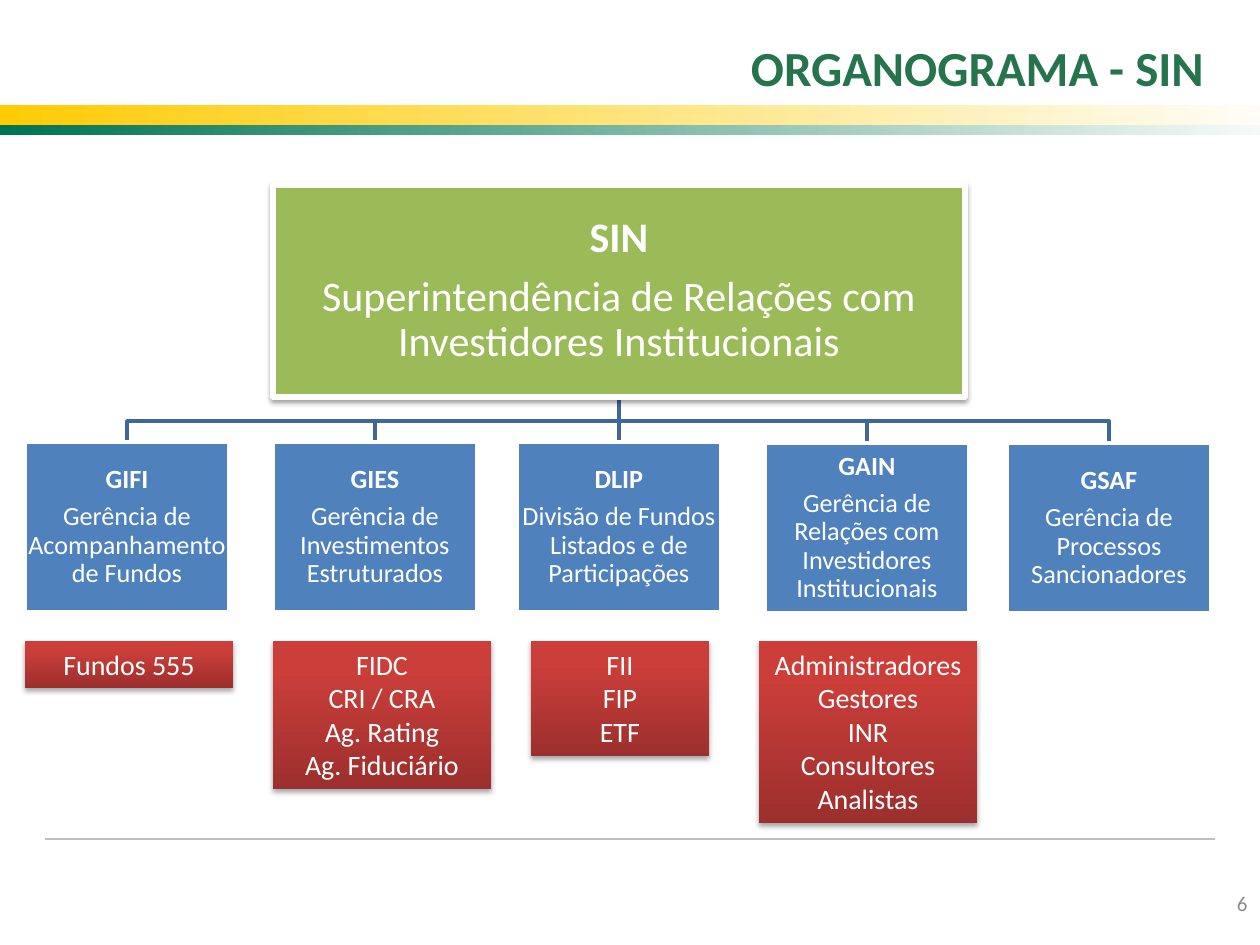
import pptx
import pptx.util
import pptx.dml.color
import pptx.enum.shapes
import pptx.enum.text
import pptx.oxml
import pptx.oxml.ns

PX = 914400 / 126  # EMU per px
THEME = {
    "font": "Calibri", "white": "FFFFFF", "title": "26744D", "number": "8C8C8C",
    "rule": "BFBFBF", "link": "3F6797", "root": "9BBB59", "unit": "4F81BD",
    "yellow": ("FFCB05", "FFFDF5"), "green": ("007450", "F5FAF8"),
    "red": ("9C2F2D", "CB3E3A"),
    "title_pt": 28, "root_pt": 24, "unit_pt": 15, "scope_pt": 16, "number_pt": 12,
}
RGB = pptx.dml.color.RGBColor.from_string
ALIGN = pptx.enum.text.PP_ALIGN
ANCHOR = pptx.enum.text.MSO_ANCHOR
RECT = pptx.enum.shapes.MSO_SHAPE.RECTANGLE
STRAIGHT = pptx.enum.shapes.MSO_CONNECTOR.STRAIGHT
NS = pptx.oxml.ns.nsdecls("a")
SHADOW = (f'<a:effectLst {NS}><a:outerShdw blurRad="39370" dist="%d" dir="5400000" '
          'rotWithShape="0"><a:srgbClr val="000000"><a:alpha val="%d"/></a:srgbClr>'
          '</a:outerShdw></a:effectLst>')

prs = pptx.Presentation()
prs.slide_width, prs.slide_height = round(1260 * PX), round(945 * PX)
s = prs.slides.add_slide(prs.slide_layouts[6])


def box(at, fill=None, border=0, shadow=None, angle=0, end=1):
    """Rectangle with a solid fill, or a gradient when fill is a pair."""
    sp = s.shapes.add_shape(RECT, *[round(v * PX) for v in at])
    sp.shadow.inherit = False
    if isinstance(fill, tuple):
        sp.fill.gradient()
        sp.fill.gradient_angle = angle
        for stop, color, position in zip(sp.fill.gradient_stops, fill, (0, end)):
            stop.color.rgb = RGB(color)
            stop.position = position
    else:
        sp.fill.solid()
        sp.fill.fore_color.rgb = RGB(fill)
    if border:
        sp.line.color.rgb = RGB(THEME["white"])
        sp.line.width = pptx.util.Pt(border)
    else:
        sp.line.fill.background()
    if shadow:
        pr = sp._element.spPr
        pr.remove(pr.find(pptx.oxml.ns.qn("a:effectLst")))
        pr.append(pptx.oxml.parse_xml(SHADOW % shadow))
    return sp


def write(sp, lines, size, color, align=ALIGN.CENTER, anchor=ANCHOR.MIDDLE,
          bold_first=False, inset=None, para=None):
    tf = sp.text_frame
    tf.word_wrap, tf.vertical_anchor = True, anchor
    if inset is not None:
        for side in ("left", "top", "right", "bottom"):
            setattr(tf, f"margin_{side}", round(inset * PX))
    for i, line in enumerate(lines):
        p = tf.paragraphs[0] if i == 0 else tf.add_paragraph()
        p.alignment = align
        for name, value in (para or {}).items():
            setattr(p, name, value)
        r = p.add_run()
        r.text = line
        r.font.color.rgb = RGB(color)
        look = {"name": THEME["font"], "size": pptx.util.Pt(size),
                "bold": bold_first and i == 0}
        for name, value in look.items():
            setattr(r.font, name, value)


# Footer rule and header bands
rule = s.shapes.add_connector(STRAIGHT, *[round(v * PX) for v in (45, 839, 1215, 839)])
rule.line.color.rgb = RGB(THEME["rule"])
rule.line.width = pptx.util.Pt(0.75)
box((0, 105, 1260, 20), THEME["yellow"])
box((0, 125, 1260, 10), THEME["green"])

# Slide number and title
for at, text, size, color, anchor, bold in (
        ((1187, 872, 73, 63), "6", "number_pt", "number", ANCHOR.MIDDLE, False),
        ((25, 19, 1191, 84), "ORGANOGRAMA - SIN", "title_pt", "title", ANCHOR.BOTTOM, True)):
    sp = s.shapes.add_textbox(*[round(v * PX) for v in at])
    write(sp, [text], THEME[size], THEME[color], ALIGN.RIGHT, anchor, bold)

# Organisation data: left, top, acronym, name
ROOT = (273, 185, 692, 212)
UNIT_W, UNIT_H, BUS_Y = 204, 170, 421
units = [
    (25, 442, "GIFI", "Gerência de Acompanhamento de Fundos"),
    (273, 442, "GIES", "Gerência de Investimentos Estruturados"),
    (517, 442, "DLIP", "Divisão de Fundos Listados e de Participações"),
    (765, 443, "GAIN", "Gerência de Relações com Investidores Institucionais"),
    (1007, 443, "GSAF", "Gerência de Processos Sancionadores"),
]

# Links from the root to each unit, behind the boxes
root_x, root_y = ROOT[0] + ROOT[2] // 2, ROOT[1] + ROOT[3]
for left, top, *_ in reversed(units):
    x = left + UNIT_W // 2
    if x == root_x:
        link = trunk = s.shapes.add_connector(
            STRAIGHT, *[round(v * PX) for v in (x, root_y, x, top)])
    else:
        path = s.shapes.build_freeform(root_x, root_y, scale=PX)
        path.add_line_segments([(root_x, BUS_Y), (x, BUS_Y), (x, top)], close=False)
        link = path.convert_to_shape()
        link.shadow.inherit = False
        link.fill.background()
    link.line.color.rgb = RGB(THEME["link"])
    link.line.width = pptx.util.Pt(2)

for line in (rule, trunk):
    line._element.spPr.append(pptx.oxml.parse_xml(f"<a:effectLst {NS}/>"))

# Root box
root = box(ROOT, THEME["root"], 3, (20320, 38000))
write(root, ["SIN", "Superintendência de Relações com Investidores Institucionais"],
      THEME["root_pt"], THEME["white"], bold_first=True, inset=2,
      para={"line_spacing": 0.9, "space_after": pptx.util.Pt(8)})
trunk.begin_connect(root, 2)

# Unit boxes
for left, top, acronym, name in units:
    sp = box((left, top, UNIT_W, UNIT_H), THEME["unit"], 2)
    write(sp, [acronym, name], THEME["unit_pt"], THEME["white"], bold_first=True, inset=1,
          para={"line_spacing": 0.9, "space_after": pptx.util.Pt(5)})
    if left + UNIT_W // 2 == root_x:
        trunk.end_connect(sp, 0)

# Scope of each unit, as tall as its lines
for left, width, lines in (
        (25, 208, ["Fundos 555"]),
        (273, 218, ["FIDC", "CRI / CRA", "Ag. Rating", "Ag. Fiduciário"]),
        (531, 178, ["FII", "FIP", "ETF"]),
        (759, 218, ["Administradores", "Gestores", "INR", "Consultores", "Analistas"])):
    height = round(13.4 + 33.75 * len(lines))
    sp = box((left, 641, width, height), THEME["red"], shadow=(22860, 35000),
             angle=90, end=0.8)
    write(sp, lines, THEME["scope_pt"], THEME["white"], anchor=ANCHOR.TOP)
    sp.text_frame.auto_size = pptx.enum.text.MSO_AUTO_SIZE.SHAPE_TO_FIT_TEXT

prs.save("out.pptx")
